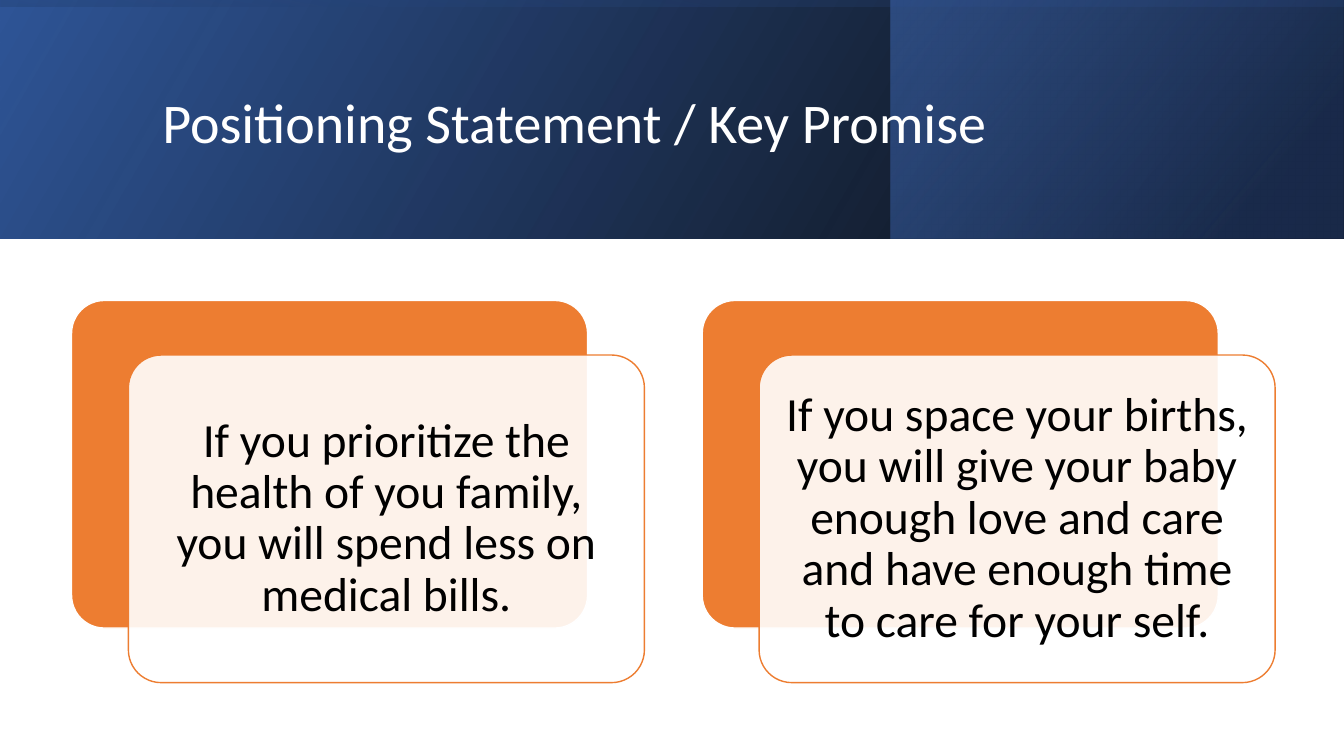
import pptx
import pptx.dml.color
import pptx.enum.shapes
import pptx.enum.text
import pptx.oxml.ns
import pptx.util
from lxml import etree

Pt = pptx.util.Pt
RGBColor = pptx.dml.color.RGBColor
SHAPE = pptx.enum.shapes.MSO_SHAPE
ALIGN = pptx.enum.text.PP_ALIGN
MIDDLE = pptx.enum.text.MSO_ANCHOR.MIDDLE
NO_FIT = pptx.enum.text.MSO_AUTO_SIZE.NONE
qn = pptx.oxml.ns.qn

BLACK = RGBColor(0x00, 0x00, 0x00)
WHITE = RGBColor(0xFF, 0xFF, 0xFF)
NAVY = RGBColor(0x20, 0x38, 0x64)
BLUE = RGBColor(0x2F, 0x55, 0x97)
SKY = RGBColor(0x44, 0x72, 0xC4)
ORANGE = RGBColor(0xED, 0x7D, 0x31)

WIDTH, HEIGHT = 960, 540
BANNER_HEIGHT = 170.6
CARD_WIDTH, CARD_HEIGHT = 368.6, 234
CARD_LEFT, CARD_TOP = 51.1, 214.6
CARD_PITCH = 450.5
OVERLAP_X, OVERLAP_Y = 40.6, 39

PROMISES = [
    "If you prioritize the health of you family, you will spend less on medical bills.",
    "If you space your births, you will give your baby enough love and care "
    "and have enough time to care for your self.",
]


class PromiseSlide:
    font = "Calibri"

    def __init__(self, deck):
        self.slide = deck.slides.add_slide(deck.slide_layouts[5])

    def shape(self, kind, left, top, width, height):
        shape = self.slide.shapes.add_shape(kind, Pt(left), Pt(top), Pt(width), Pt(height))
        shape.shadow.inherit = False
        return shape

    def set_opacity(self, color, percent):
        etree.SubElement(color, qn("a:alpha"), val=str(percent * 1000))

    def band(self, left, top, width, height, stops, angle, rotation=0):
        band = self.shape(SHAPE.RECTANGLE, left, top, width, height)
        band.rotation = rotation
        band._element.spPr.find(qn("a:xfrm")).set("flipH", "1")
        band.line.fill.background()
        band.fill.gradient()
        band.fill.gradient_angle = 360 - angle
        for stop, (position, color, opacity) in zip(band.fill.gradient_stops, stops):
            stop.position = position
            stop.color.rgb = color
        colors = band._element.spPr.iter(qn("a:srgbClr"))
        for color, (position, tint, opacity) in zip(list(colors), stops):
            self.set_opacity(color, opacity)

    def add_text(self, frame, text, size, color, align):
        frame.word_wrap = True
        frame.auto_size = NO_FIT
        frame.vertical_anchor = MIDDLE
        paragraph = frame.paragraphs[0]
        paragraph.alignment = align
        paragraph.line_spacing = 0.9
        run = paragraph.add_run()
        run.text = text
        run.font.name = self.font
        run.font.size = Pt(size)
        run.font.color.rgb = color

    def title(self, text, left, top, width, height):
        title = self.slide.shapes.title
        title.left, title.top = Pt(left), Pt(top)
        title.width, title.height = Pt(width), Pt(height)
        self.slide.shapes._spTree.append(title._element)
        self.add_text(title.text_frame, text, 40, WHITE, ALIGN.LEFT)

    def panel(self, left, top, fill, line):
        panel = self.shape(SHAPE.ROUNDED_RECTANGLE, left, top, CARD_WIDTH, CARD_HEIGHT)
        panel.adjustments[0] = 0.1
        panel.fill.solid()
        panel.fill.fore_color.rgb = fill
        panel.line.color.rgb = line
        panel.line.width = Pt(1)
        return panel

    def promise(self, left, top, text):
        self.panel(left, top, ORANGE, WHITE)
        card = self.panel(left + OVERLAP_X, top + OVERLAP_Y, WHITE, ORANGE)
        fill = card._element.spPr.find(qn("a:solidFill"))
        self.set_opacity(fill.find(qn("a:srgbClr")), 90)
        frame = card.text_frame
        frame.margin_left = frame.margin_right = Pt(10)
        frame.margin_top = frame.margin_bottom = Pt(10)
        self.add_text(frame, text, 34, BLACK, ALIGN.CENTER)


def main():
    deck = pptx.Presentation()
    deck.slide_width, deck.slide_height = Pt(WIDTH), Pt(HEIGHT)
    page = PromiseSlide(deck)

    page.band(0, 0, WIDTH, BANNER_HEIGHT, [(0, BLACK, 96), (1, BLUE, 100)], 330)
    page.band(636.5, 0, 323, BANNER_HEIGHT, [(0.19, NAVY, 68), (1, SKY, 48)], 320)
    offset = (WIDTH - BANNER_HEIGHT) / 2
    page.band(offset, -offset, BANNER_HEIGHT, WIDTH,
              [(0.23, BLUE, 16), (0.99, BLACK, 45)], 350, rotation=270)

    page.title("Positioning Statement / Key Promise", 108.7, 27.4, 765.4, 123.8)
    for column, text in enumerate(PROMISES):
        page.promise(CARD_LEFT + column * CARD_PITCH, CARD_TOP, text)

    deck.save("out.pptx")


if __name__ == "__main__":
    main()
